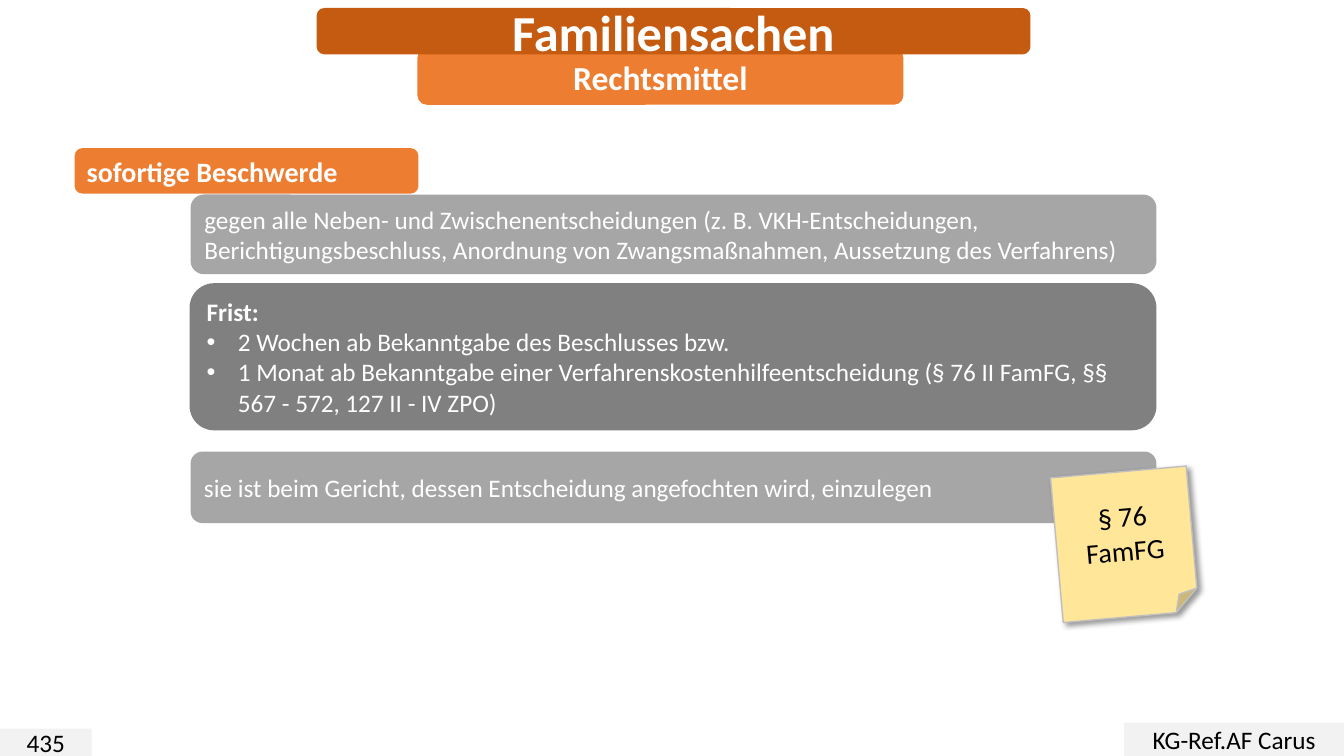
from lxml import etree
from pptx import Presentation
from pptx import util as u
from pptx.dml import color
from pptx.enum import shapes, text
from pptx.oxml import ns

ROUND = shapes.MSO_SHAPE.ROUNDED_RECTANGLE
RECT = shapes.MSO_SHAPE.RECTANGLE
NOTE = shapes.MSO_SHAPE.FOLDED_CORNER
LEFT, CENTER = text.PP_ALIGN.LEFT, text.PP_ALIGN.CENTER
ORANGE, DARK_ORANGE = "ED7D31", "C55A11"
GRAY, DARK_GRAY, PALE_GRAY = "A6A6A6", "808080", "F2F2F2"
WHITE, BLACK, YELLOW = "FFFFFF", "000000", "FFE699"


def rgb(value):
    return color.RGBColor.from_string(value)


def add_box(page, kind, place, fill, words, size, ink, bold=False, align=LEFT):
    box = page.shapes.add_shape(kind, *[u.Inches(length) for length in place])
    box.shadow.inherit = False
    box.fill.solid()
    box.fill.fore_color.rgb = rgb(fill)
    box.line.fill.background()
    frame = box.text_frame
    frame.word_wrap = True
    frame.vertical_anchor = text.MSO_ANCHOR.MIDDLE
    frame.text = words
    for para in frame.paragraphs:
        para.alignment = align
        for span in para.runs:
            span.font.name = "Calibri"
            span.font.size = u.Pt(size)
            span.font.bold = bold
            span.font.color.rgb = rgb(ink)
    return box


deck = Presentation()
deck.slide_width, deck.slide_height = u.Inches(13.33), u.Inches(7.5)
page = deck.slides.add_slide(deck.slide_layouts[6])

add_box(page, ROUND, (4.14, 0.48, 4.82, 0.56), ORANGE, "Rechtsmittel", 24, WHITE, True, CENTER)
add_box(page, ROUND, (3.14, 0.08, 7.08, 0.46), DARK_ORANGE, "Familiensachen", 36, WHITE, True, CENTER)
add_box(page, RECT, (0, 7.23, 0.91, 0.27), PALE_GRAY, "435", 18, BLACK, align=CENTER)
add_box(page, RECT, (11.15, 7.17, 2.18, 0.33), PALE_GRAY, "KG-Ref.AF Carus", 18, BLACK, align=CENTER)
add_box(page, ROUND, (0.74, 1.47, 3.41, 0.45), ORANGE, "sofortige Beschwerde", 20, WHITE, True)
add_box(page, ROUND, (1.89, 1.93, 9.58, 0.79), GRAY,
        "gegen alle Neben- und Zwischenentscheidungen (z. B. VKH-Entscheidungen, "
        "Berichtigungsbeschluss, Anordnung von Zwangsmaßnahmen, Aussetzung des Verfahrens)",
        18, WHITE)

deadline = add_box(page, ROUND, (1.88, 2.81, 9.59, 1.46), DARK_GRAY,
                   "Frist:\n"
                   "2 Wochen ab Bekanntgabe des Beschlusses bzw.\n"
                   "1 Monat ab Bekanntgabe einer Verfahrenskostenhilfeentscheidung "
                   "(§ 76 II FamFG, §§ 567 - 572, 127 II - IV ZPO)",
                   18, WHITE)
heading, *bullets = deadline.text_frame.paragraphs
heading.runs[0].font.bold = True
for para in bullets:
    settings = para._p.get_or_add_pPr()
    settings.set("marL", str(u.Inches(0.31)))
    settings.set("indent", str(-u.Inches(0.31)))
    etree.SubElement(settings, ns.qn("a:buFont"), typeface="Arial")
    etree.SubElement(settings, ns.qn("a:buChar"), char="•")

add_box(page, ROUND, (1.89, 4.48, 9.58, 0.71), GRAY,
        "sie ist beim Gericht, dessen Entscheidung angefochten wird, einzulegen", 18, WHITE)

note = add_box(page, NOTE, (10.48, 4.68, 1.35, 1.44), YELLOW, "§ 76\nFamFG", 20, BLACK, align=CENTER)
note.rotation = 355
note.line.color.rgb = rgb("BFBFBF")
note.line.width = u.Pt(1)
effects = note._element.spPr.find(ns.qn("a:effectLst"))
shadow = etree.SubElement(effects, ns.qn("a:outerShdw"), blurRad=str(u.Pt(4)), dist=str(u.Pt(3)),
                          dir=str(45 * 60000), algn="tl", rotWithShape="0")
tint = etree.SubElement(shadow, ns.qn("a:srgbClr"), val=BLACK)
etree.SubElement(tint, ns.qn("a:alpha"), val="40000")

deck.save("out.pptx")
